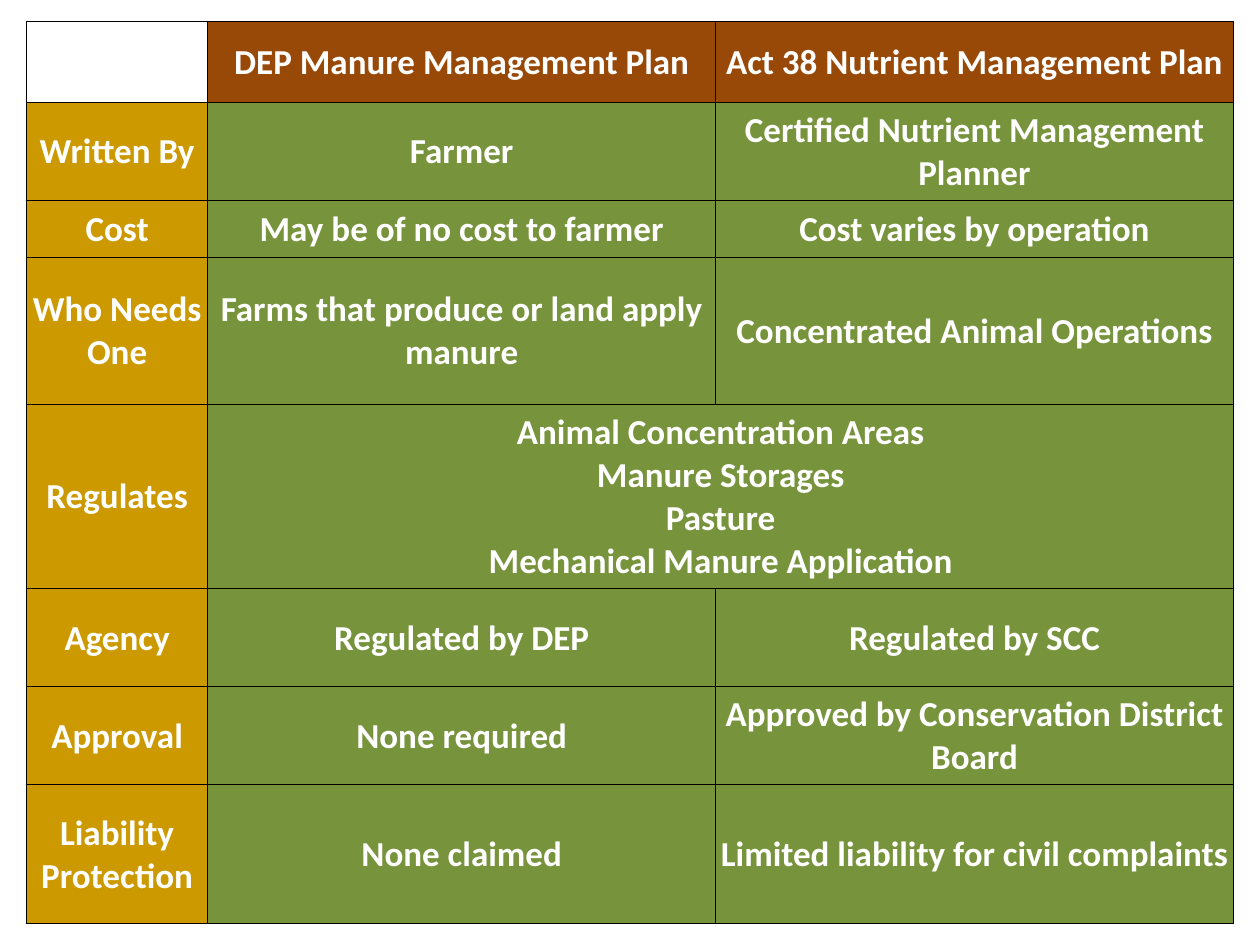
from lxml import etree
from pptx import Presentation
from pptx.dml.color import RGBColor
from pptx.enum.text import MSO_ANCHOR as Anchor, PP_ALIGN as Align
from pptx.oxml.ns import qn
from pptx.util import Inches, Pt

LEFT, TOP = 0.21, 0.17
COLS = [1.44, 4.03, 4.11]
ROWS = [0.64, 0.78, 0.45, 1.17, 1.46, 0.78, 0.78, 1.1]
BROWN, GOLD, GREEN, WHITE, BLACK = "984807", "CC9900", "77933C", "FFFFFF", "000000"
THIN, THICK = 0.5, 1

CONTENT = [
    ["", "DEP Manure Management Plan", "Act 38 Nutrient Management Plan"],
    ["Written By", "Farmer", "Certified Nutrient Management Planner"],
    ["Cost", "May be of no cost to farmer", "Cost varies by operation"],
    ["Who Needs One", "Farms that produce or land apply manure",
     "Concentrated Animal Operations"],
    ["Regulates", "Animal Concentration Areas\nManure Storages\nPasture\n"
     "Mechanical Manure Application"],
    ["Agency", "Regulated by DEP", "Regulated by SCC"],
    ["Approval", "None required", "Approved by Conservation District Board"],
    ["Liability Protection", "None claimed", "Limited liability for civil complaints"],
]


def rgb(value):
    return RGBColor.from_string(value)


def set_all(obj, formats):
    for name, value in formats.items():
        setattr(obj, name, value)


def set_borders(cell, widths):
    """Draw the borders; their lines have to come before the fill in tcPr."""
    tc_pr = cell._tc.get_or_add_tcPr()
    for i, (side, width) in enumerate(widths.items()):
        ln = etree.Element(qn(f"a:ln{side}"), w=str(Pt(width)))
        fill = etree.SubElement(ln, qn("a:solidFill"))
        etree.SubElement(fill, qn("a:srgbClr"), val=BLACK)
        tc_pr.insert(i, ln)


def set_fill(cell, color):
    if color:
        cell.fill.solid()
        cell.fill.fore_color.rgb = rgb(color)
    else:
        cell.fill.background()


def write(cell, text):
    inset = Inches(0.01)
    set_all(cell, {"text": text, "vertical_anchor": Anchor.MIDDLE, "margin_left": inset,
                   "margin_top": inset, "margin_right": inset, "margin_bottom": 0})
    for p in cell.text_frame.paragraphs:
        p.alignment = Align.CENTER
        set_all(p.font, {"name": "Calibri", "size": Pt(20), "bold": True})
        p.font.color.rgb = rgb(WHITE)


def cell_color(row, col):
    if row == 0:
        return BROWN if col else None
    return GREEN if col else GOLD


def add_comparison(s):
    frame = s.shapes.add_table(len(ROWS), len(COLS), Inches(LEFT), Inches(TOP),
                               Inches(sum(COLS)), Inches(sum(ROWS)))
    table = frame.table
    set_all(table, {"first_row": False, "horz_banding": False})
    for column, width in zip(table.columns, COLS):
        column.width = Inches(width)
    for row, height in zip(table.rows, ROWS):
        row.height = Inches(height)

    last_row, last_col = len(ROWS) - 1, len(COLS) - 1
    for r, texts in enumerate(CONTENT):
        if len(texts) < len(COLS):
            table.cell(r, len(texts) - 1).merge(table.cell(r, last_col))
        for c in range(len(COLS)):
            cell = table.cell(r, c)
            if c < len(texts):
                write(cell, texts[c])
            set_fill(cell, cell_color(r, c))
            right = c == last_col or cell.is_merge_origin
            set_borders(cell, {"L": THIN if c else THICK,
                               "R": THICK if right else THIN,
                               "T": THIN if r else THICK,
                               "B": THICK if r == last_row else THIN})


def main():
    prs = Presentation()
    set_all(prs, {"slide_width": Inches(10), "slide_height": Inches(7.5)})
    s = prs.slides.add_slide(prs.slide_layouts[6])
    add_comparison(s)
    prs.save("out.pptx")


if __name__ == "__main__":
    main()
